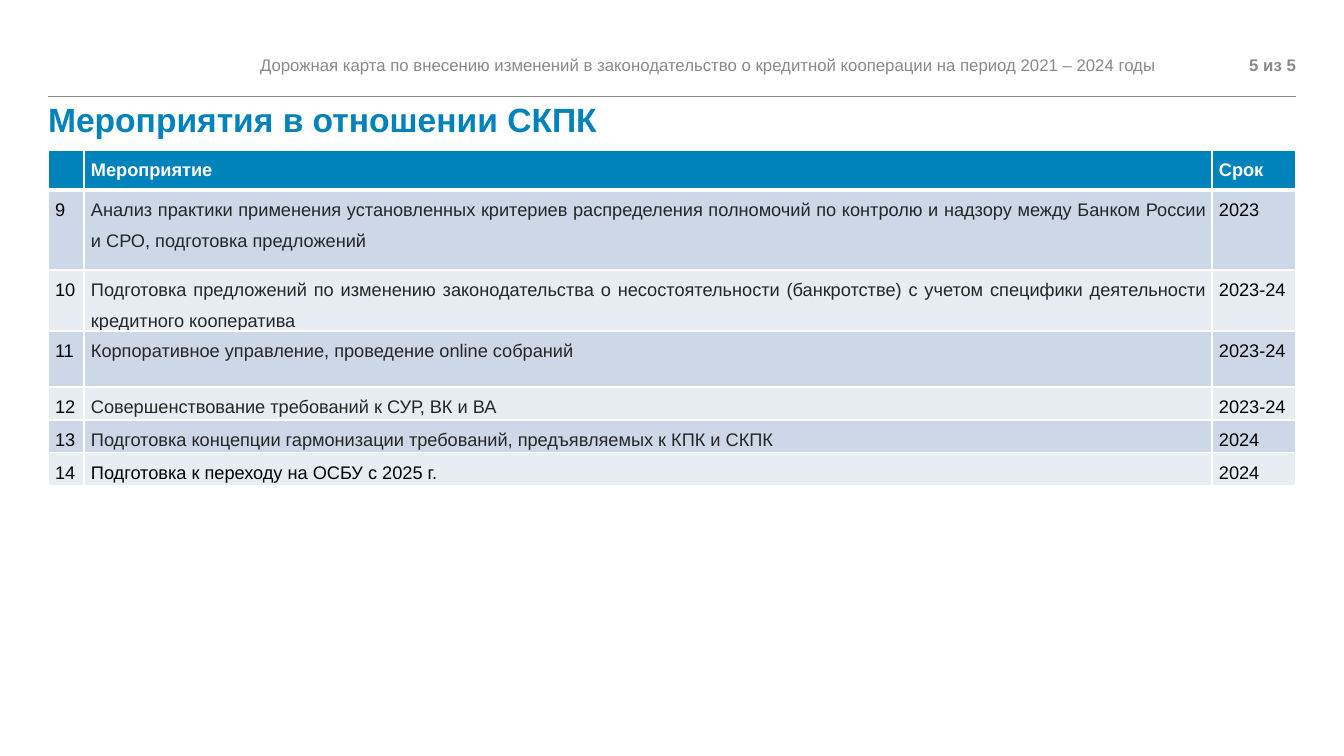
from lxml.etree import SubElement
from pptx import Presentation
from pptx.dml.color import RGBColor
from pptx.enum.shapes import MSO_CONNECTOR
from pptx.enum.text import MSO_ANCHOR, MSO_AUTO_SIZE, PP_ALIGN
from pptx.oxml import parse_xml
from pptx.oxml.ns import nsdecls, qn
from pptx.util import Emu, Pt

FONT = "Arial"
BLUE, GRAY, DARK, BLACK, WHITE = "0082BB", "888A8D", "262626", "000000", "FFFFFF"
BANDS = ("CCD8E7", "E7EDF3")

COLUMN_WIDTHS = (36, 1128, 84)
ROW_HEIGHTS = (40, 80, 61, 56, 33, 33, 33)
ACTIVITIES = (
    ("9", "Анализ практики применения установленных критериев распределения полномочий "
          "по контролю и надзору между Банком России и СРО, подготовка предложений", "2023"),
    ("10", "Подготовка предложений по изменению законодательства о несостоятельности "
           "(банкротстве) с учетом специфики деятельности кредитного кооператива", "2023-24"),
    ("11", "Корпоративное управление, проведение online собраний", "2023-24"),
    ("12", "Совершенствование требований к СУР, ВК и ВА", "2023-24"),
    ("13", "Подготовка концепции гармонизации требований, предъявляемых к КПК и СКПК", "2024"),
    ("14", "Подготовка к переходу на ОСБУ с 2025 г.", "2024"),
)


def px(length):
    """Slide pixels to EMU: 1344 px span the 13.33 inch width."""
    return Emu(round(length * 12192000 / 1344))


def color(code):
    return RGBColor.from_string(code)


def add_span(para, text, size, code, bold=False):
    span = para.add_run()
    span.text = text
    font = span.font
    font.name, font.size, font.bold = FONT, Pt(size), bold
    font.color.rgb = color(code)


def set_frame(frame, anchor):
    frame.word_wrap = True
    frame.auto_size = MSO_AUTO_SIZE.NONE
    frame.vertical_anchor = anchor
    frame.margin_left = frame.margin_right = frame.margin_top = frame.margin_bottom = 0


def add_label(page, box, text, align, bold=False):
    label = page.shapes.add_textbox(*map(px, box))
    set_frame(label.text_frame, MSO_ANCHOR.MIDDLE)
    para = label.text_frame.paragraphs[0]
    para.alignment = align
    add_span(para, text, 12, GRAY, bold)


def add_header(page, box):
    """Running title, page number and the rule below them."""
    left, top, width, height = box
    add_label(page, (left + 212, top, 930, 35),
              "Дорожная карта по внесению изменений в законодательство "
              "о кредитной кооперации на период 2021 – 2024 годы", PP_ALIGN.LEFT)
    add_label(page, (left + width - 82, top, 82, 35), "5 из 5", PP_ALIGN.RIGHT, True)
    rule = page.shapes.add_connector(MSO_CONNECTOR.STRAIGHT, px(left), px(top + height),
                                     px(left + width), px(top + height))
    rule.line.color.rgb = color(GRAY)
    rule.line.width = Pt(0.5)
    SubElement(rule._element.spPr, qn("a:effectLst"))


def add_title(page, box):
    title = page.shapes.title
    title.left, title.top, title.width, title.height = map(px, box)
    set_frame(title.text_frame, MSO_ANCHOR.TOP)
    para = title.text_frame.paragraphs[0]
    para.alignment = PP_ALIGN.LEFT
    para.line_spacing = 0.9
    add_span(para, "Мероприятия в отношении СКПК", 24, BLUE, True)


def set_borders(cell, top, bottom):
    """White borders; they come before the fill in the cell properties."""
    properties = cell._tc.get_or_add_tcPr()
    sides = (("L", 1), ("R", 1), ("T", top), ("B", bottom))
    for position, (side, width) in enumerate(sides):
        properties.insert(position, parse_xml(
            f'<a:ln{side} {nsdecls("a")} w="{Pt(width)}"><a:solidFill>'
            f'<a:srgbClr val="{WHITE}"/></a:solidFill></a:ln{side}>'))


def fill_cell(cell, text, fill, code, bold, align):
    cell.fill.solid()
    cell.fill.fore_color.rgb = color(fill)
    cell.margin_left = cell.margin_right = px(7)
    cell.margin_top = cell.margin_bottom = 0
    cell.vertical_anchor = MSO_ANCHOR.TOP
    para = cell.text_frame.paragraphs[0]
    para.alignment = align
    para.line_spacing = 1.5
    para.space_after = Pt(6)
    para.font.size = Pt(13)
    if text:
        add_span(para, text, 13, code, bold)


def add_activities(page, box):
    rows = (("", "Мероприятие", "Срок"),) + ACTIVITIES
    table = page.shapes.add_table(len(rows), len(COLUMN_WIDTHS), *map(px, box)).table
    for column, width in zip(table.columns, COLUMN_WIDTHS):
        column.width = px(width)
    for row, height in zip(table.rows, ROW_HEIGHTS):
        row.height = px(height)
    last = len(rows) - 1
    for r, values in enumerate(rows):
        heading = r == 0
        fill = BLUE if heading else BANDS[(r - 1) % 2]
        for c, value in enumerate(values):
            code = WHITE if heading else DARK if c == 1 and r < last else BLACK
            align = PP_ALIGN.LEFT if c == 1 and r == last else PP_ALIGN.JUSTIFY
            cell = table.cell(r, c)
            fill_cell(cell, value, fill, code, heading, align)
            set_borders(cell, top=3 if r == 1 else 1, bottom=3 if heading else 1)


def main():
    deck = Presentation()
    deck.slide_width, deck.slide_height = px(1344), px(756)
    page = deck.slides.add_slide(deck.slide_layouts[5])
    left, width = 48, 1248
    add_header(page, (left, 47, width, 49))
    add_title(page, (left, 103, width, 66))
    add_activities(page, (left, 150, width, sum(ROW_HEIGHTS)))
    deck.save("out.pptx")


if __name__ == "__main__":
    main()
